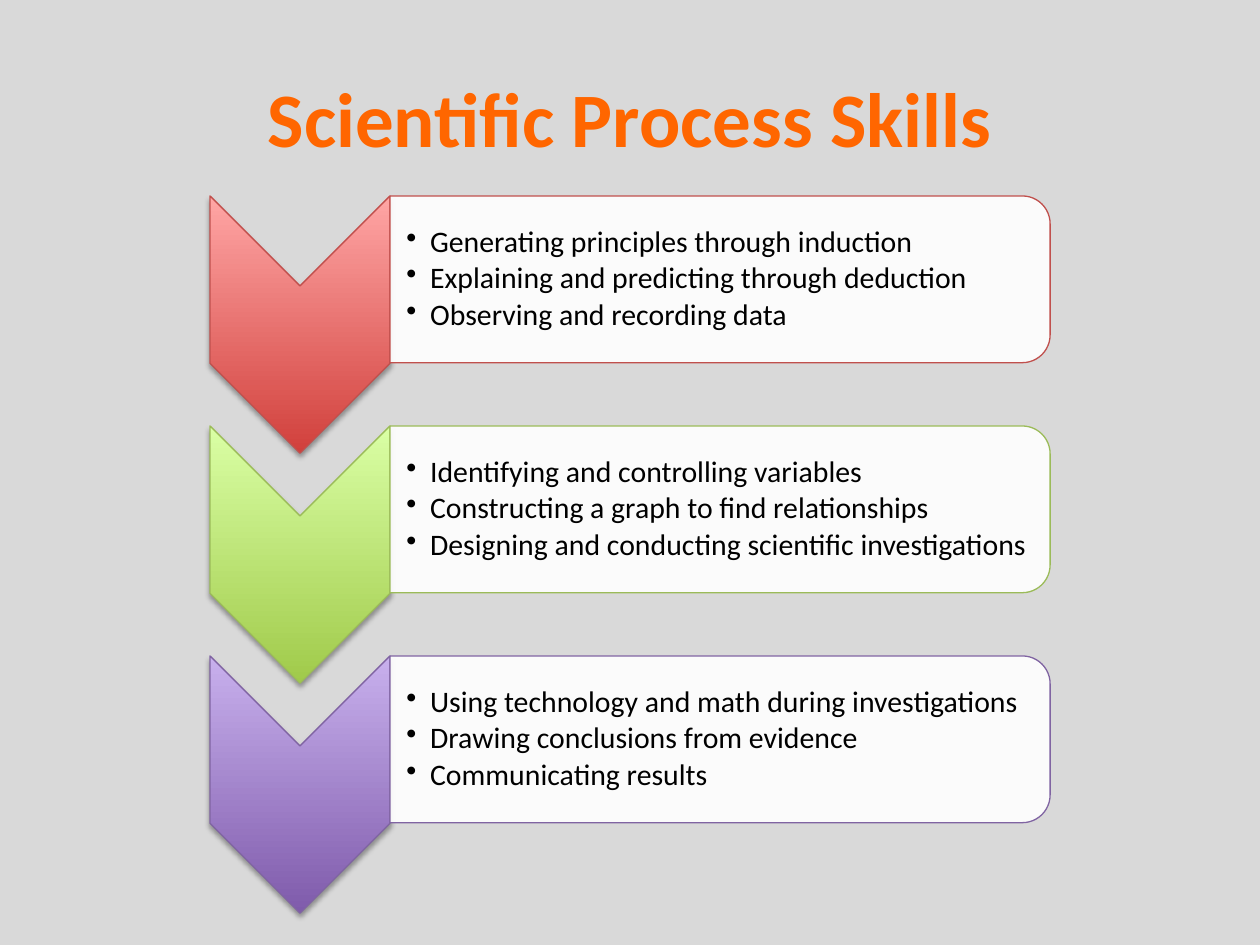
from lxml.etree import SubElement as Sub
from pptx import Presentation
from pptx.dml.color import RGBColor as Rgb
from pptx.enum.shapes import MSO_SHAPE as Shape
from pptx.enum.text import MSO_ANCHOR as Anchor, PP_ALIGN as Align
from pptx.oxml.ns import qn
from pptx.util import Pt

TITLE = "Scientific Process Skills"
STEPS = [
    ("red", ["Generating principles through induction",
             "Explaining and predicting through deduction",
             "Observing and recording data"]),
    ("green", ["Identifying and controlling variables",
               "Constructing a graph to ﬁnd relationships",
               "Designing and conducting scientiﬁc investigations"]),
    ("purple", ["Using technology and math during investigations",
                "Drawing conclusions from evidence",
                "Communicating results"]),
]
THEME = {
    "font": "Calibri", "head": 44, "body": 17,
    "back": "D9D9D9", "title": "FF6600", "text": "000000", "panel": "FFFFFF",
    # line, dark end, light end
    "red": ("C0504D", "D1403C", "FFA6A5"),
    "green": ("9BBB59", "A0CA4A", "DAFFA5"),
    "purple": ("8064A2", "7F5BAB", "C8B0ED"),
}

LEFT, TOP, PITCH = 120, 112, 131.43
ARROW_W, ARROW_H = 102.86, 147
PANEL_W, PANEL_H = 377.2, 95.3
INDENT = 13.5


def rgb(code):
    return Rgb.from_string(code)


def write(frame, lines, size, color, bold=False, align=Align.LEFT,
          bullet=False, inset=None):
    frame.word_wrap = True
    frame.vertical_anchor = Anchor.MIDDLE
    if inset:
        (frame.margin_left, frame.margin_top,
         frame.margin_right, frame.margin_bottom) = map(Pt, inset)
    for i, line in enumerate(lines):
        par = frame.add_paragraph() if i else frame.paragraphs[0]
        par.alignment = align
        run = par.add_run()
        run.text = line
        font = run.font
        font.name, font.size, font.bold = THEME["font"], Pt(size), bold
        font.color.rgb = rgb(color)
        if bullet:
            par.level = 1
            par.line_spacing = 0.9
            par.space_after = Pt(size * 0.15)
            props = par._p.get_or_add_pPr()
            props.set("marL", str(Pt(INDENT)))
            props.set("indent", str(-Pt(INDENT)))
            Sub(props, qn("a:buChar"), char="•")


def turned(slide, kind, box, line):
    """Add a shape turned by 90 degrees that fills the given box on the slide."""
    x, y, w, h = box
    shape = slide.shapes.add_shape(
        kind, Pt(x + (w - h) / 2), Pt(y + (h - w) / 2), Pt(h), Pt(w))
    shape.rotation = 90
    shape.shadow.inherit = False
    shape.line.color.rgb = rgb(line)
    shape.line.width = Pt(0.75)
    return shape


def shade(shape, dark, light):
    fill = shape.fill
    fill.gradient()
    fill.gradient_angle = 90
    for stop, code in zip(fill.gradient_stops, (dark, light)):
        stop.color.rgb = rgb(code)
    props = shape._element.spPr
    props.find(qn("a:gradFill")).set("rotWithShape", "0")
    drop = Sub(props.find(qn("a:effectLst")), qn("a:outerShdw"),
               blurRad=str(Pt(3.1)), dist=str(Pt(1.8)),
               dir="5400000", rotWithShape="0")
    color = Sub(drop, qn("a:srgbClr"), val="000000")
    Sub(color, qn("a:alpha"), val="35000")


def add_step(slide, top, name, lines):
    line, dark, light = THEME[name]
    arrow = turned(slide, Shape.CHEVRON, (LEFT, top, ARROW_W, ARROW_H), line)
    shade(arrow, dark, light)

    x = LEFT + ARROW_W
    panel = turned(slide, Shape.ROUND_2_SAME_RECTANGLE,
                   (x, top, PANEL_W, PANEL_H), line)
    panel.fill.solid()
    panel.fill.fore_color.rgb = rgb(THEME["panel"])
    color = panel._element.spPr.find(qn("a:solidFill")).find(qn("a:srgbClr"))
    Sub(color, qn("a:alpha"), val="90000")

    text = slide.shapes.add_textbox(
        Pt(x), Pt(top + 4.7), Pt(PANEL_W - 4.7), Pt(PANEL_H - 9.4))
    write(text.text_frame, lines, THEME["body"], THEME["text"],
          bullet=True, inset=(9.4, 0.8, 0.8, 0.8))


def main():
    deck = Presentation()
    deck.slide_width, deck.slide_height = Pt(720), Pt(540)
    slide = deck.slides.add_slide(deck.slide_layouts[5])
    slide.background.fill.solid()
    slide.background.fill.fore_color.rgb = rgb(THEME["back"])

    title = slide.shapes.title
    title.left, title.top = Pt(36), Pt(21.6)
    title.width, title.height = Pt(648), Pt(90)
    write(title.text_frame, [TITLE], THEME["head"], THEME["title"],
          bold=True, align=Align.CENTER)

    for i, (name, lines) in enumerate(STEPS):
        add_step(slide, TOP + i * PITCH, name, lines)
    deck.save("out.pptx")


if __name__ == "__main__":
    main()
